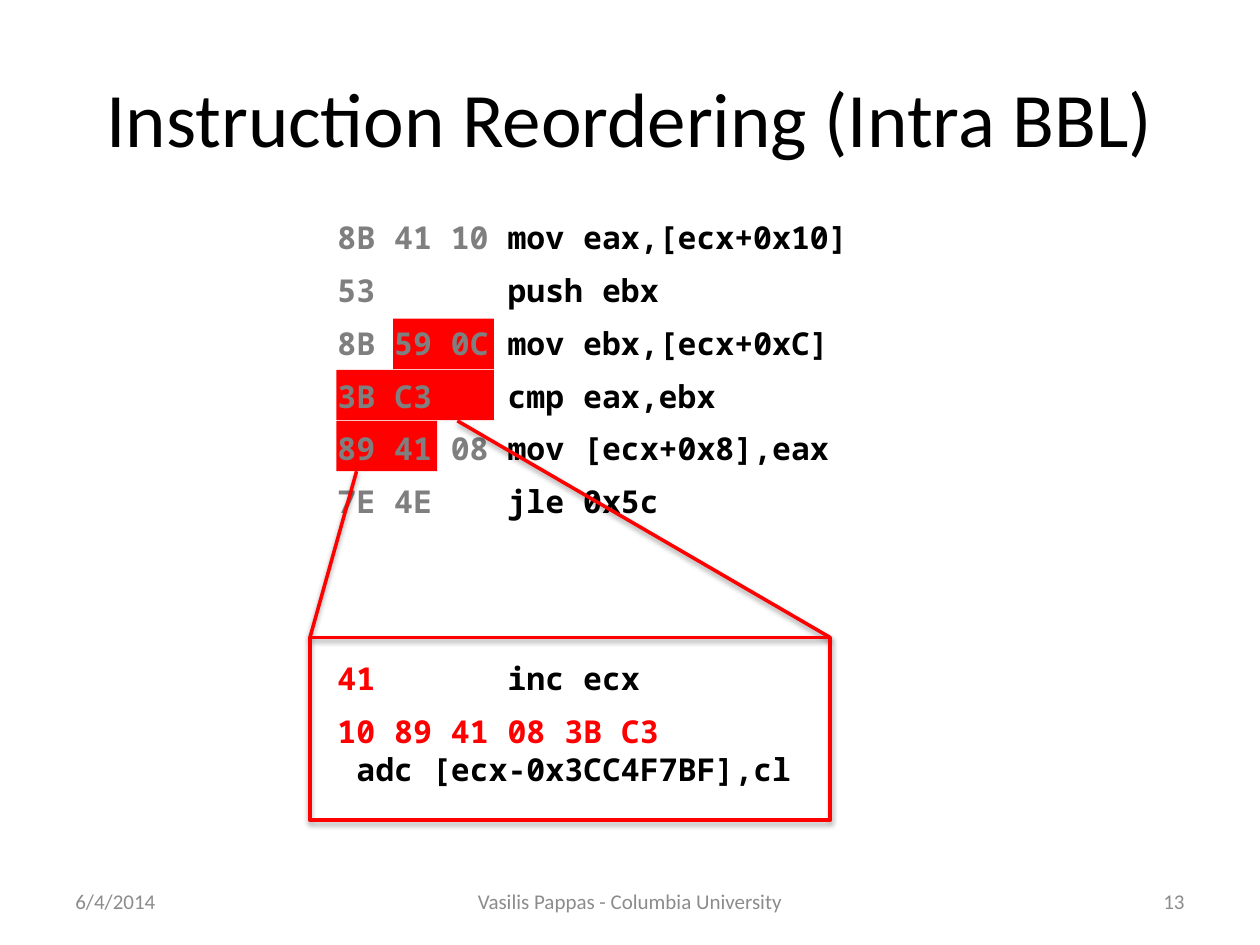
import pptx
import pptx.dml.color
import pptx.enum.shapes
import pptx.enum.text
import pptx.oxml.ns
import pptx.util
from lxml import etree
from pptx.util import Inches

COLORS = {"black": "000000", "gray": "7F7F7F", "footer": "8C8C8C", "red": "FF0000"}
ALIGN = pptx.enum.text.PP_ALIGN
ANCHOR = pptx.enum.text.MSO_ANCHOR
SHAPE = pptx.enum.shapes.MSO_SHAPE
CODE = {"name": "Noto Sans Mono", "size": pptx.util.Pt(18), "bold": True}
FOOTER = {"name": "Calibri", "size": pptx.util.Pt(12)}
TITLE = {"name": "Calibri", "size": pptx.util.Pt(44)}
CODE_COLUMN = 1.35
ROW_PITCH = 0.42
ROW_HEIGHT = 0.4

# bytes, instruction, box width
LISTING = [
    ("8B 41 10", "mov eax,[ecx+0x10]", 4.34),
    ("53", "push ebx", 2.86),
    ("8B 59 0C", "mov ebx,[ecx+0xC]", 4.12),
    ("3B C3", "cmp eax,ebx", 3.36),
    ("89 41 08", "mov [ecx+0x8],eax", 4.17),
    ("7E 4E", "jle 0x5c", 2.86),
]


def rgb(name):
    return pptx.dml.color.RGBColor.from_string(COLORS[name])


def add_run(p, text, color, fmt):
    r = p.add_run()
    r.text = text
    for key, value in fmt.items():
        setattr(r.font, key, value)
    r.font.color.rgb = rgb(color)


def add_box(s, x, y, w, h, anchor=ANCHOR.TOP):
    tf = s.shapes.add_textbox(Inches(x), Inches(y), Inches(w), Inches(h)).text_frame
    tf.word_wrap = True
    tf.vertical_anchor = anchor
    return tf


def add_tab_stop(p, x):
    tabs = etree.SubElement(p._p.get_or_add_pPr(), pptx.oxml.ns.qn("a:tabLst"))
    etree.SubElement(tabs, pptx.oxml.ns.qn("a:tab"), pos=str(Inches(x)), algn="l")


def add_code_row(s, x, y, w, code_bytes, instruction, color):
    p = add_box(s, x, y, w, ROW_HEIGHT).paragraphs[0]
    add_tab_stop(p, CODE_COLUMN)
    add_run(p, code_bytes + "\t", color, CODE)
    add_run(p, instruction, "black", CODE)


def outline(sp, alpha, distance):
    """Red line with a soft shadow straight below it."""
    sp.line.color.rgb = rgb("red")
    sp.line.width = pptx.util.Pt(2)
    qn = pptx.oxml.ns.qn
    effects = etree.SubElement(sp._element.spPr, qn("a:effectLst"))
    shadow = etree.SubElement(
        effects, qn("a:outerShdw"), blurRad="40000",
        dist=str(pptx.util.Pt(distance)), dir="5400000", rotWithShape="0")
    color = etree.SubElement(shadow, qn("a:srgbClr"), val=COLORS["black"])
    etree.SubElement(color, qn("a:alpha"), val=str(alpha * 1000))


def add_title(s, x, y, w, h):
    sp = s.shapes.title
    sp.left, sp.top, sp.width, sp.height = map(Inches, (x, y, w, h))
    tf = sp.text_frame
    tf.vertical_anchor = ANCHOR.MIDDLE
    p = tf.paragraphs[0]
    p.alignment = ALIGN.CENTER
    add_run(p, "Instruction Reordering (Intra BBL)", "black", TITLE)


def add_highlights(s, x, y):
    """Mark the bytes of the hidden gadget on three rows."""
    for dx, row, w in [(0.45, 0, 0.8), (0, 2, 0.8), (0, 1, 1.25)]:
        sp = s.shapes.add_shape(SHAPE.RECTANGLE, Inches(x + dx),
                                Inches(y + row * 0.405), Inches(w), Inches(0.4))
        sp.shadow.inherit = False
        sp.fill.solid()
        sp.fill.fore_color.rgb = rgb("red")
        sp.line.fill.background()


def add_listing(s, x, y):
    for i, (code_bytes, instruction, w) in enumerate(LISTING):
        add_code_row(s, x, y + i * ROW_PITCH, w, code_bytes, instruction, "gray")


def add_callout(s, x, y, w, h):
    """Framed gadget, with lines from the highlighted bytes to its top corners."""
    text_x, text_y = x + 0.12, y + 0.12
    add_code_row(s, text_x, text_y, 3.48, "41", "inc ecx", "red")
    tf = add_box(s, text_x, text_y + ROW_PITCH, 3.89, 0.71)
    add_run(tf.paragraphs[0], "10 89 41 08 3B C3", "red", CODE)
    p = tf.add_paragraph()
    p._p.get_or_add_pPr().set("marL", str(Inches(0.15)))
    add_run(p, "adc [ecx-0x3CC4F7BF],cl", "black", CODE)

    for x1, y1, x2 in [(x + 1.17, y - 1.72, x + w), (x + 0.37, y - 1.32, x)]:
        line = s.shapes.add_connector(
            pptx.enum.shapes.MSO_CONNECTOR.STRAIGHT,
            Inches(x1), Inches(y1), Inches(x2), Inches(y))
        outline(line, 38, 1.6)

    frame = s.shapes.add_shape(SHAPE.RECTANGLE, *map(Inches, (x, y, w, h)))
    frame.fill.background()
    outline(frame, 35, 1.8)


def add_footer(s, x, y, w, h):
    side, middle = 2.33, 3.17
    for left, width, align, text in [
        (x, side, ALIGN.LEFT, "6/4/2014"),
        (x + (w - middle) / 2, middle, ALIGN.CENTER, "Vasilis Pappas - Columbia University"),
        (x + w - side, side, ALIGN.RIGHT, "13"),
    ]:
        p = add_box(s, left, y, width, h, ANCHOR.MIDDLE).paragraphs[0]
        p.alignment = align
        add_run(p, text, "footer", FOOTER)


def main():
    prs = pptx.Presentation()
    prs.slide_width, prs.slide_height = Inches(10), Inches(7.5)
    s = prs.slides.add_slide(prs.slide_layouts[5])
    add_highlights(s, 2.67, 2.53)
    add_title(s, 0.5, 0.3, 9, 1.25)
    add_footer(s, 0.5, 6.95, 9, 0.4)
    add_listing(s, 2.58, 1.68)
    add_callout(s, 2.46, 5.06, 4.13, 1.45)
    prs.save("out.pptx")


if __name__ == "__main__":
    main()
